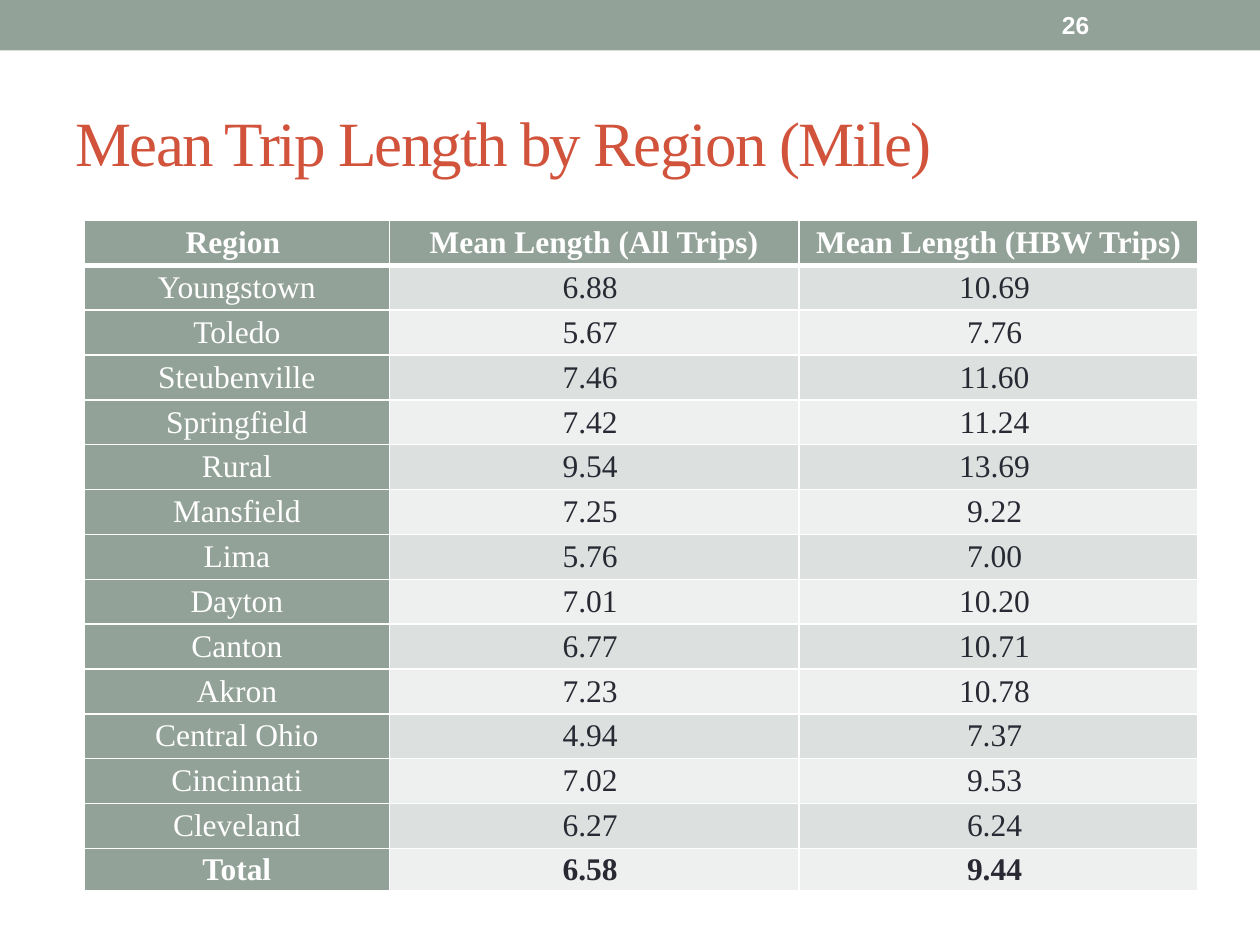
import dataclasses

import lxml.etree
import pptx
import pptx.dml.color
import pptx.enum.shapes
import pptx.enum.text
import pptx.oxml.ns
import pptx.util

Inches = pptx.util.Inches
Pt = pptx.util.Pt
RGB = pptx.dml.color.RGBColor.from_string
ALIGN = pptx.enum.text.PP_ALIGN
MIDDLE = pptx.enum.text.MSO_ANCHOR.MIDDLE


@dataclasses.dataclass(frozen=True)
class Theme:
    serif: str = "Times New Roman"
    sans: str = "Arial"
    sage: str = "93A299"
    title: str = "D2533C"
    ink: str = "292934"
    white: str = "FFFFFF"
    bands: tuple = ("DCE0DE", "EEF0EF")
    title_size: int = 36
    table_size: int = 18
    number_size: int = 14


THEME = Theme()
HEADER = ("Region ", "Mean Length (All Trips)", "Mean Length (HBW Trips)")
TRIP_LENGTHS = [
    ("Youngstown", 6.88, 10.69),
    ("Toledo", 5.67, 7.76),
    ("Steubenville", 7.46, 11.60),
    ("Springfield", 7.42, 11.24),
    ("Rural", 9.54, 13.69),
    ("Mansfield", 7.25, 9.22),
    ("Lima", 5.76, 7.00),
    ("Dayton", 7.01, 10.20),
    ("Canton", 6.77, 10.71),
    ("Akron", 7.23, 10.78),
    ("Central Ohio", 4.94, 7.37),
    ("Cincinnati", 7.02, 9.53),
    ("Cleveland", 6.27, 6.24),
    ("Total", 6.58, 9.44),
]


def style_font(font, name, size, color, bold=False):
    font.name = name
    font.size = Pt(size)
    font.bold = bold
    font.color.rgb = RGB(color)


def set_borders(cell, top, bottom):
    """Draw white cell borders; top and bottom are widths in points."""
    properties = cell._tc.get_or_add_tcPr()
    sides = (("lnL", 1), ("lnR", 1), ("lnT", top), ("lnB", bottom))
    for position, (side, width) in enumerate(sides):
        line = lxml.etree.Element(pptx.oxml.ns.qn(f"a:{side}"), w=str(Pt(width)))
        fill = lxml.etree.SubElement(line, pptx.oxml.ns.qn("a:solidFill"))
        lxml.etree.SubElement(fill, pptx.oxml.ns.qn("a:srgbClr"), val=THEME.white)
        properties.insert(position, line)


deck = pptx.Presentation()
deck.slide_width = Inches(10)
deck.slide_height = Inches(7.5)
slide = deck.slides.add_slide(deck.slide_layouts[5])

# Top bar and slide number
bar = slide.shapes.add_shape(
    pptx.enum.shapes.MSO_SHAPE.RECTANGLE, 0, 0, deck.slide_width, Inches(0.4)
)
bar.shadow.inherit = False
bar.fill.solid()
bar.fill.fore_color.rgb = RGB(THEME.sage)
bar.line.fill.background()

number = slide.shapes.add_textbox(
    Inches(8.33), Inches(0.02), Inches(1.17), Inches(0.36)
).text_frame
number.word_wrap = True
number.vertical_anchor = MIDDLE
number.text = "26"
style_font(number.paragraphs[0].font, THEME.sans, THEME.number_size, THEME.white, True)

# Title
title = slide.shapes.title
title.left, title.top = Inches(0.5), Inches(0.58)
title.width, title.height = Inches(9), Inches(1.08)
heading = title.text_frame
heading.text = "Mean Trip Length by Region (Mile)"
heading.vertical_anchor = MIDDLE
heading.paragraphs[0].alignment = ALIGN.LEFT
style_font(heading.paragraphs[0].font, THEME.serif, THEME.title_size, THEME.title)
heading.paragraphs[0].runs[0].font._element.set("spc", "-100")

# Trip length table
rows = [HEADER] + [
    (region, f"{all_trips:.2f} ", f"{hbw_trips:.2f} ")
    for region, all_trips, hbw_trips in TRIP_LENGTHS
]
last = len(rows) - 1
table = slide.shapes.add_table(
    len(rows), len(HEADER), Inches(0.67), Inches(1.75), Inches(8.84), Inches(5.33)
).table
for column, width in zip(table.columns, (2.42, 3.25, 3.17)):
    column.width = Inches(width)

for r, values in enumerate(rows):
    table.rows[r].height = Inches(0.34 if r == last else 0.356)
    for c, value in enumerate(values):
        cell = table.cell(r, c)
        is_label = r == 0 or c == 0
        cell.text = value
        cell.vertical_anchor = MIDDLE
        cell.margin_left = cell.margin_right = Inches(0.07)
        cell.margin_top = cell.margin_bottom = 0
        cell.fill.solid()
        cell.fill.fore_color.rgb = RGB(THEME.sage if is_label else THEME.bands[(r - 1) % 2])
        paragraph = cell.text_frame.paragraphs[0]
        paragraph.alignment = ALIGN.CENTER
        style_font(
            paragraph.font,
            THEME.serif,
            THEME.table_size,
            THEME.white if is_label else THEME.ink,
            r in (0, last),
        )
        set_borders(cell, top=3 if r == 1 else 1, bottom=3 if r == 0 else 1)

deck.save("out.pptx")
